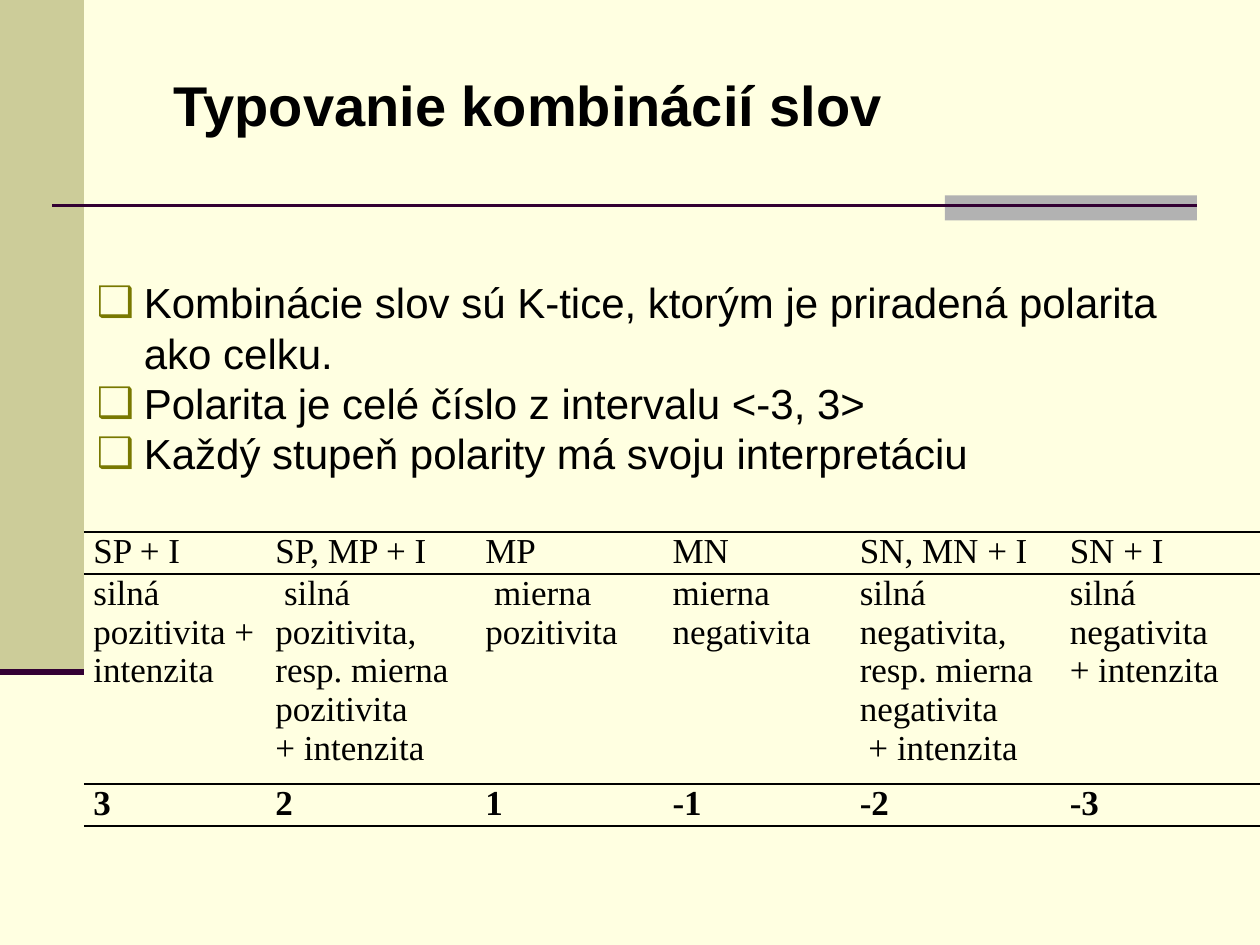
from lxml.etree import SubElement
from pptx import Presentation
from pptx.dml.color import RGBColor
from pptx.enum.shapes import MSO_CONNECTOR, MSO_SHAPE
from pptx.enum.text import MSO_ANCHOR, MSO_AUTO_SIZE, PP_ALIGN
from pptx.oxml import parse_xml
from pptx.oxml.ns import nsdecls, qn
from pptx.util import Pt

CREAM = RGBColor(0xFF, 0xFF, 0xE1)
KHAKI = RGBColor(0xCC, 0xCC, 0x99)
GREY = RGBColor(0xB2, 0xB2, 0xB2)
PLUM = RGBColor(0x33, 0x00, 0x33)
OLIVE = RGBColor(0x78, 0x78, 0x00)
BLACK = RGBColor(0x00, 0x00, 0x00)

TITLE_FONT = {"name": "Arial", "size": Pt(32), "bold": True}
BODY_FONT = {"name": "Arial", "size": Pt(24), "bold": False}
CELL_FONT = {"name": "Times New Roman", "size": Pt(20), "bold": False}
SCORE_FONT = CELL_FONT | {"bold": True}
PARA_FORMAT = {"alignment": PP_ALIGN.LEFT, "space_before": Pt(0),
               "space_after": Pt(0), "line_spacing": 1.0}
FRAME_FORMAT = {"auto_size": MSO_AUTO_SIZE.NONE, "vertical_anchor": MSO_ANCHOR.TOP}

BULLETS = [
    "Kombinácie slov sú K-tice, ktorým je priradená polarita ako celku.",
    "Polarita je celé číslo z intervalu <-3, 3>",
    "Každý stupeň polarity má svoju interpretáciu",
]
POLARITY_ROWS = [
    ["SP + I", "SP, MP + I", "MP", "MN", "SN, MN + I", "SN + I"],
    ["silná pozitivita + intenzita",
     " silná pozitivita, resp. mierna pozitivita\n+ intenzita",
     " mierna pozitivita",
     "mierna negativita",
     "silná negativita, resp. mierna negativita\n + intenzita",
     "silná negativita\n+ intenzita"],
    ["3", "2", "1", "-1", "-2", "-3"],
]
ROW_FONTS = [CELL_FONT, CELL_FONT, SCORE_FONT]
ROW_HEIGHTS = [24, 120, 24]
COLUMN_WIDTHS = [104, 120, 107, 107, 120, 114]
RULE_WEIGHTS = [1.5, 1, 1, 1.5]


def apply(target, values):
    for name, value in values.items():
        setattr(target, name, value)


class SlideBuilder:
    """Holds the current slide; all lengths are in points."""

    def __init__(self, page):
        self.page = page
        page.background.fill.solid()
        page.background.fill.fore_color.rgb = CREAM

    def bar(self, left, top, width, height, color):
        box = self.page.shapes.add_shape(
            MSO_SHAPE.RECTANGLE, Pt(left), Pt(top), Pt(width), Pt(height))
        box.shadow.inherit = False
        box.fill.solid()
        box.fill.fore_color.rgb = color
        box.line.fill.background()

    def rule(self, left, right, y, weight):
        line = self.page.shapes.add_connector(
            MSO_CONNECTOR.STRAIGHT, Pt(left), Pt(y), Pt(right), Pt(y))
        line.line.color.rgb = PLUM
        line.line.width = Pt(weight)
        SubElement(line._element.spPr, qn("a:effectLst"))

    def fill_text(self, frame, text, font):
        frame.text = text
        for para in frame.paragraphs:
            apply(para, PARA_FORMAT)
            for span in para.runs:
                apply(span.font, font)
                span.font.color.rgb = BLACK

    def placeholder(self, box, left, top, width, height, text, font, wrap=True):
        apply(box, {"left": Pt(left), "top": Pt(top),
                    "width": Pt(width), "height": Pt(height)})
        apply(box.text_frame, FRAME_FORMAT | {"word_wrap": wrap})
        self.fill_text(box.text_frame, text, font)

    def title(self, left, top, width, height, text):
        self.placeholder(self.page.shapes.title, left, top, width, height,
                         text, TITLE_FONT, wrap=False)

    def bullets(self, left, top, width, height, items):
        box = self.page.placeholders[1]
        self.placeholder(box, left, top, width, height, "\n".join(items), BODY_FONT)
        for para in box.text_frame.paragraphs:
            props = para._p.get_or_add_pPr()
            props.set("marL", str(Pt(27)))
            props.set("indent", str(-Pt(27)))
            color = SubElement(props, qn("a:buClr"))
            SubElement(color, qn("a:srgbClr"), val=str(OLIVE))
            SubElement(props, qn("a:buFont"), typeface="Arial")
            SubElement(props, qn("a:buChar"), char="❑")

    def cell_borders(self, cell, top, bottom):
        props = cell._tc.get_or_add_tcPr()
        sides = {"lnL": None, "lnR": None, "lnT": top, "lnB": bottom}
        for position, (side, weight) in enumerate(sides.items()):
            paint = (f'<a:solidFill><a:srgbClr val="{BLACK}"/></a:solidFill>'
                     if weight else "<a:noFill/>")
            props.insert(position, parse_xml(
                f'<a:{side} {nsdecls("a")} w="{Pt(weight or 0)}">{paint}</a:{side}>'))

    def table(self, left, top, rows):
        table = self.page.shapes.add_table(
            len(rows), len(COLUMN_WIDTHS), Pt(left), Pt(top),
            Pt(sum(COLUMN_WIDTHS)), Pt(sum(ROW_HEIGHTS))).table
        apply(table, {"first_row": False, "horz_banding": False})
        for column, width in zip(table.columns, COLUMN_WIDTHS):
            column.width = Pt(width)
        for index, row in enumerate(table.rows):
            row.height = Pt(ROW_HEIGHTS[index])
            for cell, text in zip(row.cells, rows[index]):
                apply(cell, {"margin_left": Pt(5.4), "margin_right": Pt(5.4),
                             "margin_top": 0, "margin_bottom": 0})
                cell.fill.background()
                self.fill_text(cell.text_frame, text, ROW_FONTS[index])
                self.cell_borders(cell, *RULE_WEIGHTS[index:index + 2])


def main():
    deck = Presentation()
    apply(deck, {"slide_width": Pt(720), "slide_height": Pt(540)})
    slide = SlideBuilder(deck.slides.add_slide(deck.slide_layouts[1]))
    slide.bar(0, 0, 48, 384, KHAKI)
    slide.bar(540, 111.6, 144, 14.4, GREY)
    slide.rule(30, 684, 117.5, 1.5)
    slide.rule(0, 48, 384, 3.5)
    slide.title(92, 36.7, 442, 46, "Typovanie kombinácií slov")
    slide.bullets(48, 154.5, 629, 125, BULLETS)
    slide.table(48, 304, POLARITY_ROWS)
    deck.save("out.pptx")


if __name__ == "__main__":
    main()
